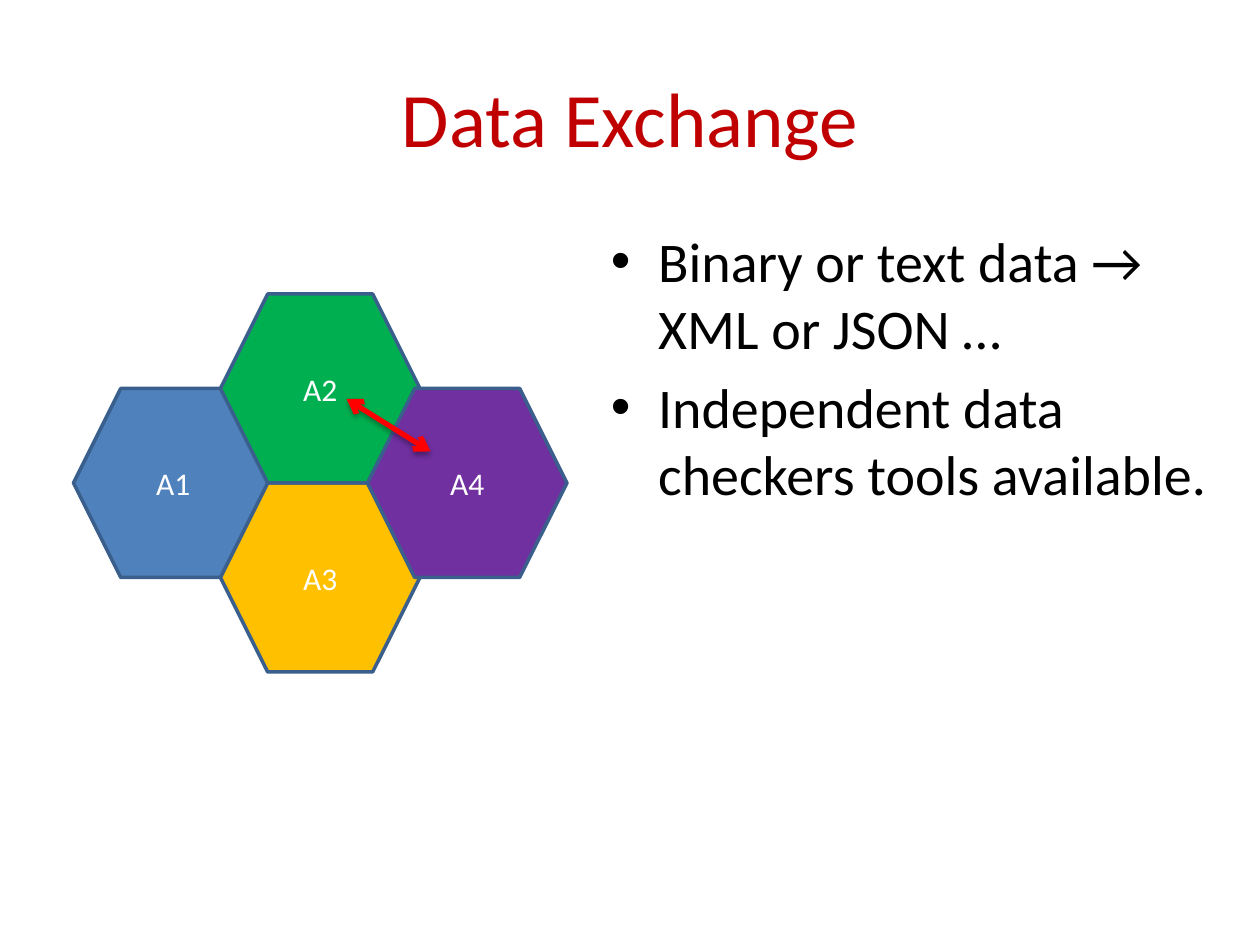
from lxml.etree import SubElement
from pptx import Presentation
from pptx.dml.color import RGBColor
from pptx.enum.shapes import MSO_CONNECTOR, MSO_SHAPE
from pptx.enum.text import MSO_ANCHOR, PP_ALIGN
from pptx.oxml.ns import qn
from pptx.util import Pt

SCALE = 7620  # EMU per px, 120 px to the inch
COLOURS = {
    "title": "C00000", "text": "000000", "label": "FFFFFF", "outline": "3A5F8C",
    "A1": "4F81BD", "A2": "00B050", "A3": "FFC000", "A4": "7030A0",
    "arrow": "FF0000", "shadow": "000000",
}


def px(*lengths):
    return [length * SCALE for length in lengths]


def add_run(paragraph, text, size, colour):
    run = paragraph.add_run()
    run.text = text
    run.font.name = "Calibri"
    run.font.size = Pt(size)
    run.font.color.rgb = RGBColor.from_string(COLOURS[colour])


presentation = Presentation()
presentation.slide_width, presentation.slide_height = px(1200, 900)
slide = presentation.slides.add_slide(presentation.slide_layouts[5])

# Title
title = slide.shapes.title
title.left, title.top, title.width, title.height = px(60, 36, 1080, 150)
title.text_frame.vertical_anchor = MSO_ANCHOR.MIDDLE
paragraph = title.text_frame.paragraphs[0]
paragraph.alignment = PP_ALIGN.CENTER
add_run(paragraph, "Data Exchange", 44, "title")

# Bulleted points
points = [
    "Binary or text data → XML or JSON …",
    "Independent data checkers tools available.",
]
body = slide.shapes.add_textbox(*px(570, 210, 600, 594)).text_frame
body.word_wrap = True
indent = px(45)[0]
for index, point in enumerate(points):
    paragraph = body.add_paragraph() if index else body.paragraphs[0]
    paragraph.space_before = Pt(6.4)
    properties = paragraph._p.get_or_add_pPr()
    properties.set("marL", str(indent))
    properties.set("indent", str(-indent))
    SubElement(properties, qn("a:buFont"), typeface="Arial")
    SubElement(properties, qn("a:buChar"), char="•")
    add_run(paragraph, point, 32, "text")

# Honeycomb: name, column and half-row of each cell, from back to front
cells = [("A1", 0, 1), ("A3", 1, 2), ("A2", 1, 0), ("A4", 2, 1)]
for name, column, half_row in cells:
    hexagon = slide.shapes.add_shape(
        MSO_SHAPE.HEXAGON, *px(70 + 140 * column, 280 + 90 * half_row, 190, 180))
    hexagon.shadow.inherit = False
    hexagon.fill.solid()
    hexagon.fill.fore_color.rgb = RGBColor.from_string(COLOURS[name])
    hexagon.line.color.rgb = RGBColor.from_string(COLOURS["outline"])
    hexagon.line.width = Pt(2)
    hexagon.text_frame.vertical_anchor = MSO_ANCHOR.MIDDLE
    paragraph = hexagon.text_frame.paragraphs[0]
    paragraph.alignment = PP_ALIGN.CENTER
    add_run(paragraph, name, 18, "label")

# Two-way arrow between A2 and A4
arrow = slide.shapes.add_connector(MSO_CONNECTOR.STRAIGHT, *px(330, 380, 410, 430))
arrow.line.color.rgb = RGBColor.from_string(COLOURS["arrow"])
arrow.line.width = Pt(3)
line = arrow.line._get_or_add_ln()
for end in ("a:headEnd", "a:tailEnd"):
    SubElement(line, qn(end), type="arrow")
effects = SubElement(arrow._element.spPr, qn("a:effectLst"))
shadow = SubElement(effects, qn("a:outerShdw"), blurRad=str(Pt(3.1)),
                    dist=str(Pt(1.8)), dir="5400000", rotWithShape="0")
shadow_colour = SubElement(shadow, qn("a:srgbClr"), val=COLOURS["shadow"])
SubElement(shadow_colour, qn("a:alpha"), val="35000")

presentation.save("out.pptx")
